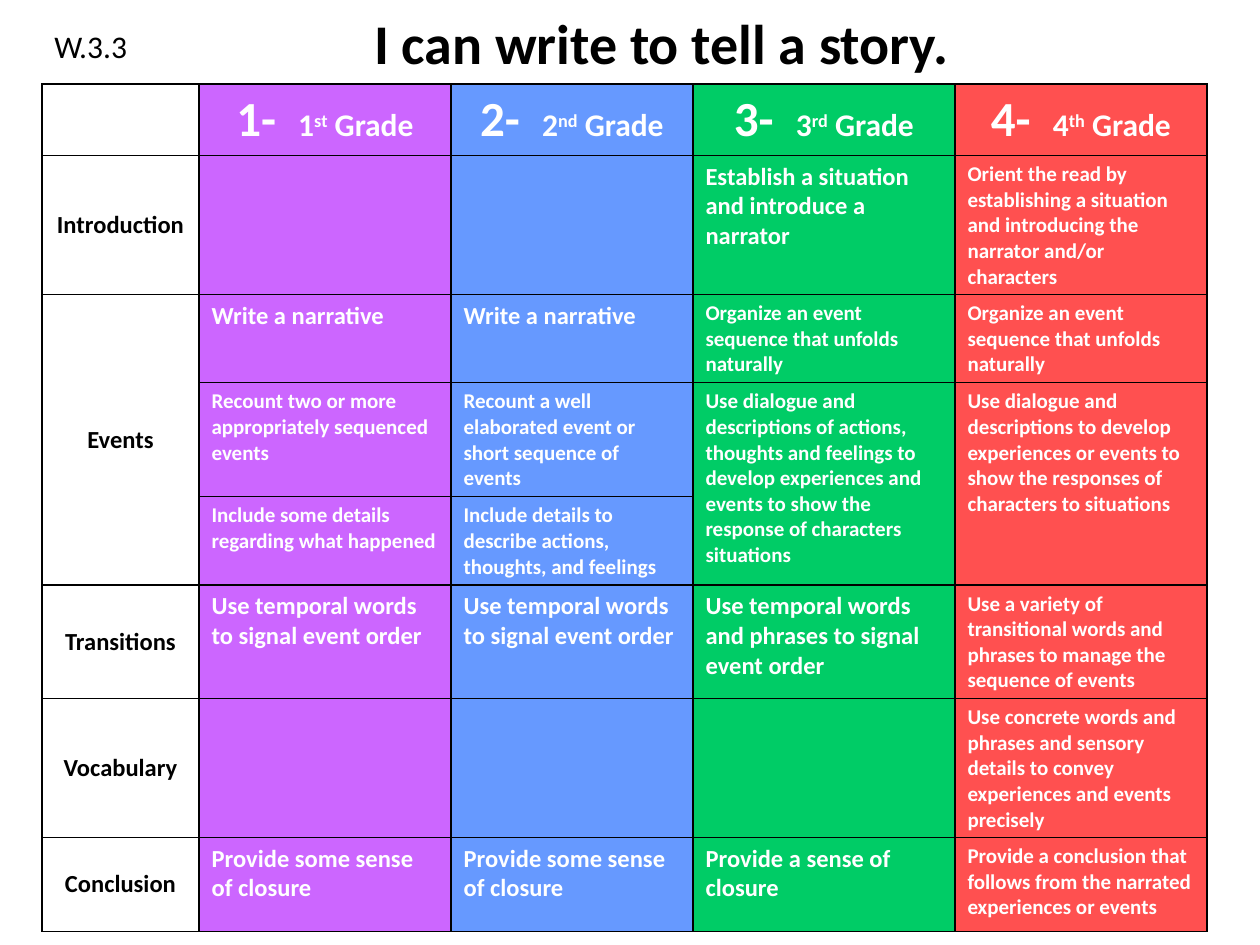
from lxml.etree import SubElement
from pptx import Presentation
from pptx.dml.color import RGBColor
from pptx.enum.text import MSO_ANCHOR, PP_ALIGN
from pptx.oxml.ns import qn
from pptx.util import Emu, Pt

BLACK = RGBColor(0x00, 0x00, 0x00)
WHITE = RGBColor(0xFF, 0xFF, 0xFF)
PURPLE = RGBColor(0xCC, 0x66, 0xFF)
BLUE = RGBColor(0x66, 0x99, 0xFF)
GREEN = RGBColor(0x00, 0xCC, 0x66)
RED = RGBColor(0xFF, 0x50, 0x50)
SCALE = 914400 / 126


def px(n):
    return Emu(round(n * SCALE))


def add_run(p, text, size, color, bold=True):
    r = p.add_run()
    r.text = text
    r.font.color.rgb = color
    for name, value in {"name": "Calibri", "size": Pt(size), "bold": bold}.items():
        setattr(r.font, name, value)
    return r


GRADES = [("1", "st", PURPLE), ("2", "nd", BLUE), ("3", "rd", GREEN), ("4", "th", RED)]
COL_WIDTHS = [157, 252, 242, 262, 252]
HEADER_HEIGHT = 71
ROWS = [
    (139, "Introduction", (14, 14, 14, 12), (
        "", "",
        "Establish a situation and introduce a narrator",
        "Orient the read by establishing a situation and introducing the narrator and/or characters")),
    (88, "Events", (14, 14, 12, 12), (
        "Write a narrative",
        "Write a narrative",
        "Organize an event sequence that unfolds naturally",
        "Organize an event sequence that unfolds naturally")),
    (114, "", (12, 12, 12, 12), (
        "Recount two or more appropriately sequenced events",
        "Recount a well elaborated event or short sequence of events",
        "Use dialogue and descriptions of actions, thoughts and feelings to develop "
        "experiences and events to show the response of characters situations",
        "Use dialogue and descriptions to develop experiences or events to show the "
        "responses of characters to situations")),
    (88, "", (12, 12, 12, 12), (
        "Include some details regarding what happened",
        "Include details to describe actions, thoughts, and feelings",
        "", "")),
    (113, "Transitions", (14, 14, 14, 12), (
        "Use temporal words to signal event order",
        "Use temporal words to signal event order",
        "Use temporal words and phrases to signal event order",
        "Use a variety of transitional words and phrases to manage the sequence of events")),
    (139, "Vocabulary", (14, 14, 14, 12), (
        "", "", "",
        "Use concrete words and phrases and sensory details to convey experiences and events precisely")),
    (94, "Conclusion", (14, 14, 14, 12), (
        "Provide some sense of closure",
        "Provide some sense of closure",
        "Provide a sense of closure",
        "Provide a conclusion that follows from the narrated experiences or events")),
]
MERGES = [(2, 0, 4, 0), (3, 3, 4, 3), (3, 4, 4, 4)]

prs = Presentation()
prs.slide_width, prs.slide_height = px(1260), px(945)
s = prs.slides.add_slide(prs.slide_layouts[5])

title = s.shapes.title
for name, value in {"left": 126, "top": 0, "width": 1071, "height": 84}.items():
    setattr(title, name, px(value))
title.text_frame.vertical_anchor = MSO_ANCHOR.MIDDLE
p = title.text_frame.paragraphs[0]
p.alignment = PP_ALIGN.CENTER
add_run(p, "I can write to tell a story.", 32, BLACK)

standard = s.shapes.add_textbox(px(42), px(21), px(179), px(50))
standard.text_frame.word_wrap = True
add_run(standard.text_frame.paragraphs[0], "W.3.3", 18, BLACK, False)

heights = [HEADER_HEIGHT] + [row[0] for row in ROWS]
frame = s.shapes.add_table(len(heights), len(COL_WIDTHS), px(42), px(84),
                           px(sum(COL_WIDTHS)), px(sum(heights)))
table = frame.table
for flag in ("first_row", "horz_banding"):
    setattr(table, flag, False)
for col, width in zip(table.columns, COL_WIDTHS):
    col.width = px(width)
for row, height in zip(table.rows, heights):
    row.height = px(height)

for row in table.rows:
    for j, cell in enumerate(row.cells):
        tcPr = cell._tc.get_or_add_tcPr()
        for side in ("a:lnL", "a:lnR", "a:lnT", "a:lnB"):
            ln = SubElement(tcPr, qn(side), w=str(Pt(1)))
            fill = SubElement(ln, qn("a:solidFill"))
            SubElement(fill, qn("a:srgbClr"), val=str(BLACK))
        if j:
            cell.fill.solid()
            cell.fill.fore_color.rgb = GRADES[j - 1][2]
        else:
            cell.fill.background()

for j, (number, ordinal, _) in enumerate(GRADES, 1):
    p = table.cell(0, j).text_frame.paragraphs[0]
    p.alignment = PP_ALIGN.CENTER
    add_run(p, f"{number}-  ", 28, WHITE)
    add_run(p, number, 18, WHITE)
    r = add_run(p, ordinal, 18, WHITE)
    r._r.get_or_add_rPr().set("baseline", "30000")
    add_run(p, " Grade", 18, WHITE)

for i, (_, label, sizes, texts) in enumerate(ROWS, 1):
    if label:
        cell = table.cell(i, 0)
        cell.vertical_anchor = MSO_ANCHOR.MIDDLE
        p = cell.text_frame.paragraphs[0]
        p.alignment = PP_ALIGN.CENTER
        add_run(p, label, 14, BLACK)
    for j, (size, text) in enumerate(zip(sizes, texts), 1):
        if text:
            add_run(table.cell(i, j).text_frame.paragraphs[0], text, size, WHITE)

for top, left, bottom, right in MERGES:
    table.cell(top, left).merge(table.cell(bottom, right))

prs.save("out.pptx")
